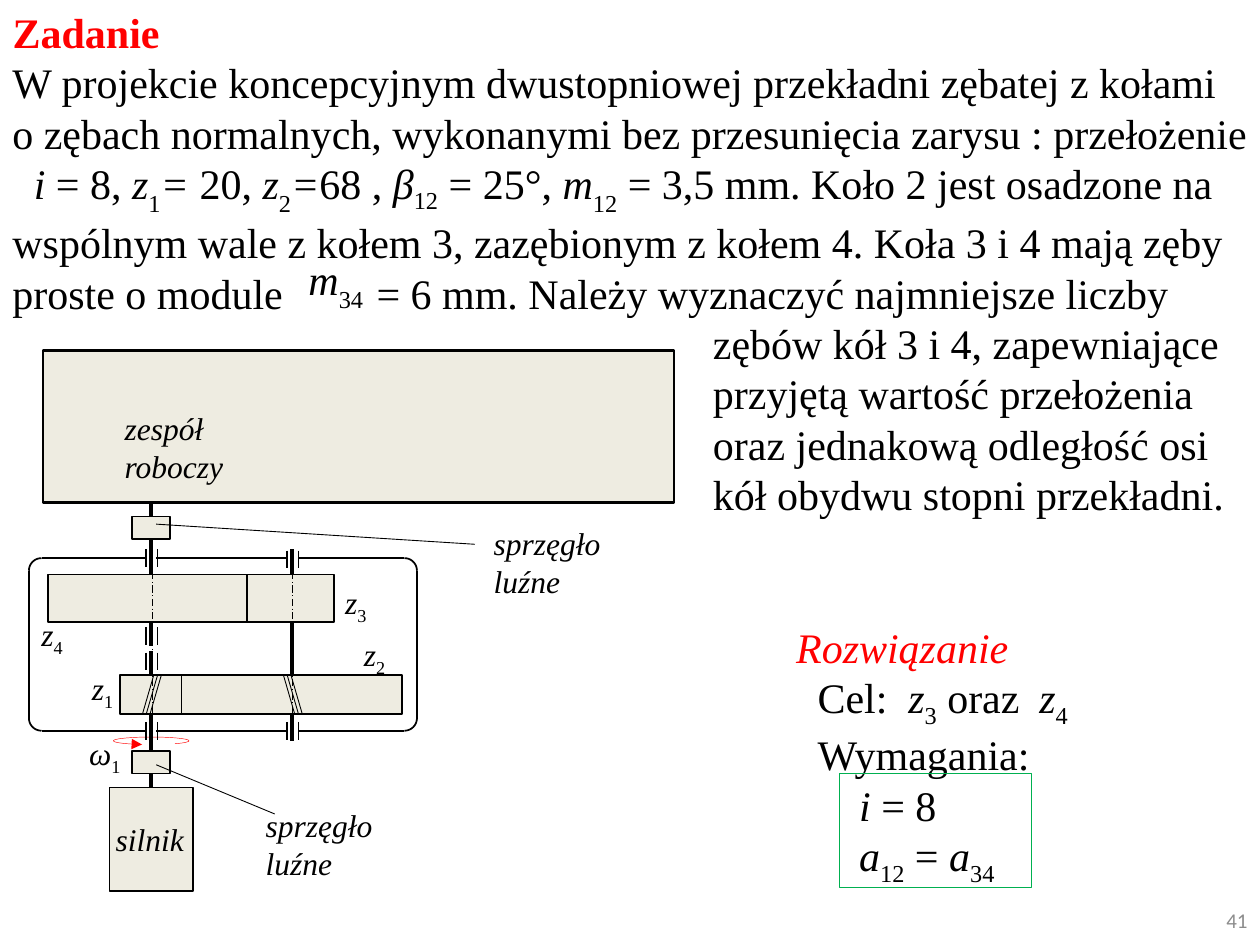
from math import cos, radians, sin

from lxml.etree import SubElement
from pptx import Presentation
from pptx.dml.color import RGBColor
from pptx.enum.dml import MSO_LINE
from pptx.enum.shapes import MSO_CONNECTOR, MSO_SHAPE
from pptx.enum.text import MSO_ANCHOR, MSO_AUTO_SIZE, PP_ALIGN
from pptx.oxml.ns import qn
from pptx.util import Inches, Pt

BLACK = RGBColor(0, 0, 0)
RED = RGBColor(0xFF, 0, 0)
GREEN = RGBColor(0, 0xB0, 0x50)
CREAM = RGBColor(0xEE, 0xEC, 0xE1)
GRAY = RGBColor(0x8C, 0x8C, 0x8C)
SERIF = "Times New Roman"
PLAIN, ITALIC, SUB, LOW_SUB = "plain", "italic", "sub", "low sub"
BASELINES = {SUB: "-25000", LOW_SUB: "-30000"}
TOP, BOTTOM = 0, 2


class Drawing:
    def __init__(self, page):
        self.page = page
        self.shapes = page.shapes

    def title(self, text, left, top, width, height):
        box = self.shapes.title
        box.left, box.top, box.width, box.height = map(Inches, (left, top, width, height))
        frame = box.text_frame
        frame.text = text
        frame.auto_size = MSO_AUTO_SIZE.NONE
        frame.vertical_anchor = MSO_ANCHOR.TOP
        para = frame.paragraphs[0]
        para.alignment = PP_ALIGN.LEFT
        self.style(para.runs[0], 24, RED)
        para.runs[0].font.bold = True

    def style(self, span, size, color, kind=PLAIN, name=SERIF):
        font = span.font
        font.name, font.size = name, Pt(size)
        font.color.rgb = color
        font.italic = kind == ITALIC
        if kind in BASELINES:
            font._element.set("baseline", BASELINES[kind])

    def box(self, left, top, width, height, anchor=MSO_ANCHOR.TOP):
        frame = self.shapes.add_textbox(*map(Inches, (left, top, width, height))).text_frame
        frame.word_wrap = True
        frame.vertical_anchor = anchor
        return frame

    def add_spans(self, para, spans, size=24, color=BLACK, tabs=()):
        if tabs:
            stops = SubElement(para._p.get_or_add_pPr(), qn("a:tabLst"))
            for stop in tabs:
                SubElement(stops, qn("a:tab"), pos=str(Inches(stop)), algn="l")
        for text, kind in spans:
            if text == "\n":
                para.add_line_break()
                continue
            span = para.add_run()
            span.text = text
            self.style(span, size, color, kind)

    def label(self, spans, *place):
        self.add_spans(self.box(*place).paragraphs[0], spans, 18)

    def rect(self, left, top, width, height, weight=1, color=BLACK, fill=CREAM):
        shape = self.shapes.add_shape(MSO_SHAPE.RECTANGLE, *map(Inches, (left, top, width, height)))
        shape.shadow.inherit = False
        if fill is None:
            shape.fill.background()
        else:
            shape.fill.solid()
            shape.fill.fore_color.rgb = fill
        shape.line.color.rgb = color
        shape.line.width = Pt(weight)
        return shape

    def line(self, x1, y1, x2, y2, weight=1, dash=None, begin=None, end=None):
        line = self.shapes.add_connector(MSO_CONNECTOR.STRAIGHT, *map(Inches, (x1, y1, x2, y2)))
        line.line.color.rgb = BLACK
        line.line.width = Pt(weight)
        if dash:
            line.line.dash_style = dash
        SubElement(line._element.spPr, qn("a:effectLst"))
        if begin:
            line.begin_connect(begin, BOTTOM)
        if end:
            line.end_connect(end, TOP)

    def arc(self, x, y, rx, ry, start, stop, weight=1, color=BLACK, arrow=False, steps=40):
        angles = [radians(start + (stop - start) * step / steps) for step in range(steps + 1)]
        points = [(Inches(x + rx * cos(a)), Inches(y + ry * sin(a))) for a in angles]
        builder = self.shapes.build_freeform(*points[0], scale=1.0)
        builder.add_line_segments(points[1:], close=False)
        shape = builder.convert_to_shape()
        shape.shadow.inherit = False
        shape.fill.background()
        shape.line.color.rgb = color
        shape.line.width = Pt(weight)
        if arrow:
            SubElement(shape.line._get_or_add_ln(), qn("a:tailEnd"), type="triangle")


def add_task(drawing):
    drawing.title("Zadanie", 0, 0, 10, 0.5)
    task = drawing.box(0, 0.4, 10, 2.12)
    drawing.add_spans(task.paragraphs[0], [
        ("W projekcie koncepcyjnym dwustopniowej przekładni zębatej z kołami "
         "o zębach normalnych, wykonanymi bez przesunięcia zarysu : przełożenie", PLAIN),
        ("\n", PLAIN), ("\t", PLAIN), ("i ", ITALIC), ("= 8, ", PLAIN),
        ("z", ITALIC), ("1", LOW_SUB), ("= ", ITALIC), ("20, ", PLAIN),
        ("z", ITALIC), ("2", LOW_SUB), ("=", ITALIC), ("68 , ", PLAIN),
        ("β", ITALIC), ("12", SUB), (" = 25°, ", PLAIN), ("m", ITALIC), ("12", LOW_SUB),
        (" = 3,5 mm. Koło 2 jest osadzone na wspólnym wale z kołem 3, zazębionym "
         "z kołem 4. Koła 3 i 4 mają zęby proste o module\t= 6 mm. "
         "Należy wyznaczyć najmniejsze liczby", PLAIN)], tabs=(0.17, 2.89))
    module = drawing.box(2.35, 2, 0.73, 0.5, MSO_ANCHOR.MIDDLE)
    drawing.add_spans(module.paragraphs[0], [("m", ITALIC), ("34", LOW_SUB)])
    rest = drawing.box(5.56, 2.47, 4.44, 1.72)
    drawing.add_spans(rest.paragraphs[0], [
        ("zębów kół 3 i 4, zapewniające przyjętą wartość przełożenia oraz "
         "jednakową odległość osi kół obydwu stopni przekładni.", PLAIN)])


def add_housing(drawing):
    left, top, right, bottom, radius = 0.23, 4.43, 3.31, 5.8, 0.1
    for x, y, start in ((left + radius, top + radius, 180), (right - radius, top + radius, 270),
                        (right - radius, bottom - radius, 0), (left + radius, bottom - radius, 90)):
        drawing.arc(x, y, radius, radius, start, start + 90, steps=10)
    for x in (left, right):
        drawing.line(x, top + radius, x, bottom - radius)
    for y in (top, bottom):
        for x1, x2 in ((left + radius, 1.16), (1.24, 2.28), (2.37, right - radius)):
            drawing.line(x1, y, x2, y)


def add_gearbox(drawing):
    drawing.arc(1.2, 5.88, 0.3, 0.03, 51, -256, 0.25, RED, arrow=True)
    add_housing(drawing)
    drawing.rect(0.34, 2.78, 5.01, 1.21, weight=1.5)
    upper_coupling = drawing.rect(1.05, 4.1, 0.3, 0.18)
    lower_coupling = drawing.rect(1.05, 5.96, 0.3, 0.18)
    motor = drawing.rect(0.87, 6.25, 0.66, 0.82)
    drawing.rect(0.38, 4.56, 2.27, 0.38)
    drawing.rect(0.95, 5.36, 2.24, 0.31)
    drawing.line(1.96, 4.56, 1.96, 4.94)
    drawing.line(1.44, 5.36, 1.44, 5.67)

    drawing.line(1.2, 3.99, 1.2, 4.1, 2.25, end=upper_coupling)
    drawing.line(1.2, 4.28, 1.2, 4.56, 2.25, begin=upper_coupling)
    drawing.line(1.2, 5.67, 1.2, 5.96, 2.25, end=lower_coupling)
    drawing.line(1.2, 6.14, 1.2, 6.25, 2.25, begin=lower_coupling, end=motor)
    for x, y1, y2 in ((1.2, 4.94, 5.13), (1.2, 5.17, 5.36),
                      (2.32, 4.36, 4.56), (2.32, 4.94, 5.36), (2.32, 5.67, 5.88)):
        drawing.line(x, y1, x, y2, 2.25)
    for x, y in ((1.2, 4.36), (1.2, 4.98), (1.2, 5.18), (1.2, 5.73), (2.32, 4.37), (2.32, 5.73)):
        for side in (-0.04, 0.05):
            drawing.line(x + side, y, x + side, y + 0.14)
    for x in (1.21, 2.32):
        drawing.line(x, 4.54, x, 5.68, 0.5, MSO_LINE.LONG_DASH_DOT)
    for shift in (-0.03, 0, 0.03):
        drawing.line(1.25 + shift, 5.36, 1.16 + shift, 5.67, 0.5)
        drawing.line(2.28 + shift, 5.36, 2.37 + shift, 5.67, 0.5)
    drawing.line(3.77, 4.32, 1.24, 4.16, 0.5)
    drawing.line(2.18, 6.46, 1.24, 6.07, 0.5)

    for letter, index, left, top in (("z", "2", 2.79, 4.99), ("z", "1", 0.63, 5.26),
                                     ("z", "3", 2.64, 4.58), ("z", "4", 0.23, 4.83),
                                     ("ω", "1", 0.61, 5.78)):
        drawing.label([(letter, ITALIC), (index, SUB)], left, top, 0.52, 0.42)
    for text, *place in (("silnik", 0.82, 6.46, 0.78, 0.38),
                         ("sprzęgło luźne", 3.82, 4.11, 1.07, 0.61),
                         ("sprzęgło luźne", 2.01, 6.35, 1.49, 0.43),
                         ("zespół roboczy", 0.89, 3.2, 1.58, 0.47)):
        drawing.label([(text, ITALIC)], *place)


def add_solution(drawing):
    frame = drawing.box(6.22, 4.88, 2.58, 2.12)
    drawing.add_spans(frame.paragraphs[0], [("Rozwiązanie", ITALIC)], color=RED)
    for tabs, spans in (
        ((0.17, 0.89, 1.93), [("\tCel:\t", PLAIN), ("z", ITALIC), ("3", SUB),
                              (" oraz\t", PLAIN), ("z", ITALIC), ("4", SUB)]),
        ((0.17,), [("\tWymagania:", PLAIN)]),
        ((0.5,), [("\t", PLAIN), ("i ", ITALIC), ("= 8", PLAIN)]),
        ((0.5,), [("\t", PLAIN), ("a", ITALIC), ("12", SUB), (" = ", PLAIN),
                  ("a", ITALIC), ("34", SUB)]),
    ):
        drawing.add_spans(frame.add_paragraph(), spans, tabs=tabs)
    drawing.rect(6.66, 6.14, 1.53, 0.9, 0.5, GREEN, None)


def add_page_number(drawing):
    para = drawing.box(9.25, 7.1, 0.75, 0.4, MSO_ANCHOR.MIDDLE).paragraphs[0]
    para.text = "41"
    para.alignment = PP_ALIGN.RIGHT
    drawing.style(para.runs[0], 12, GRAY, name="Calibri")


def main():
    deck = Presentation()
    deck.slide_width, deck.slide_height = Inches(10), Inches(7.5)
    drawing = Drawing(deck.slides.add_slide(deck.slide_layouts[5]))
    add_task(drawing)
    add_gearbox(drawing)
    add_solution(drawing)
    add_page_number(drawing)
    deck.save("out.pptx")


if __name__ == "__main__":
    main()
